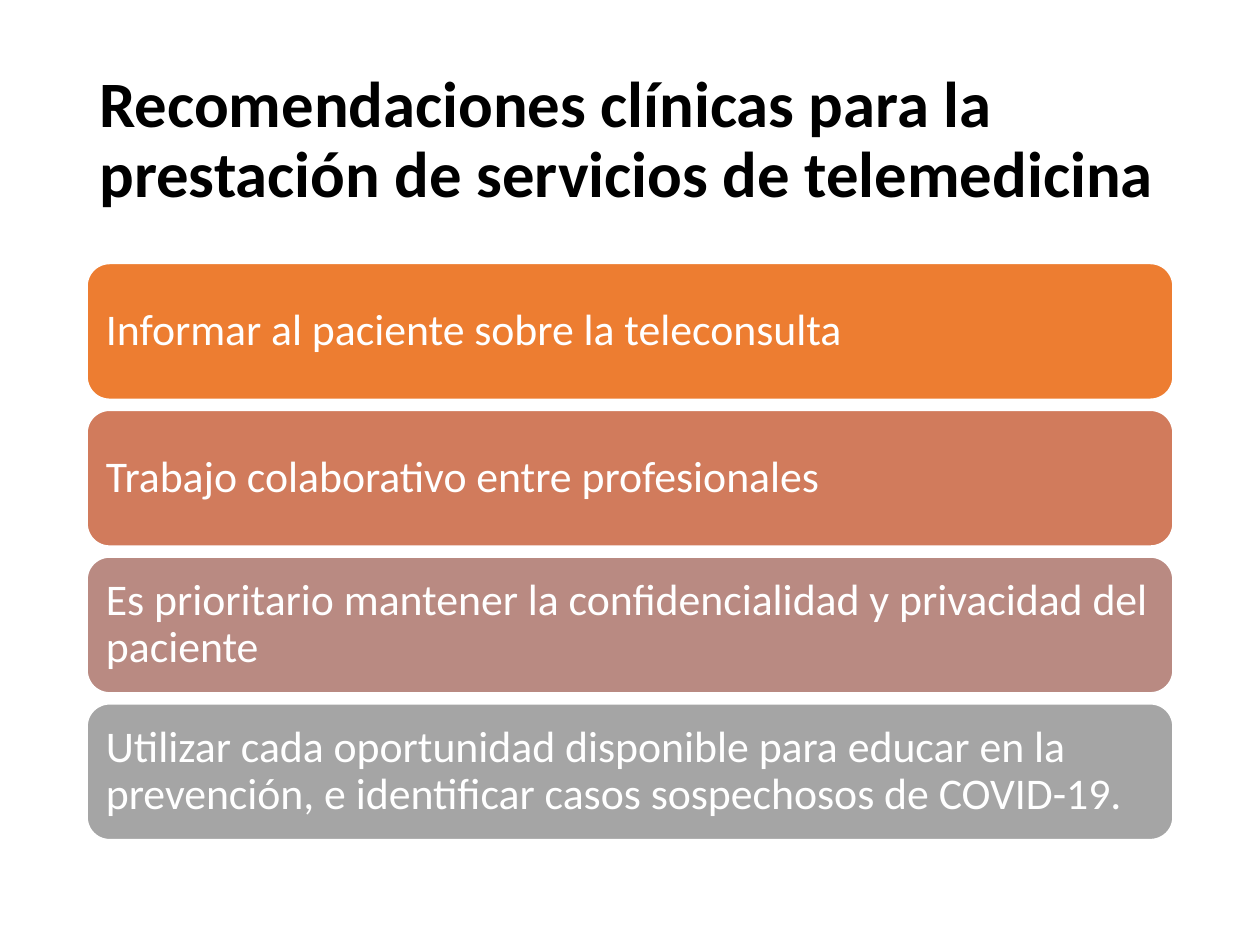
import pptx
import pptx.util
import pptx.dml.color
import pptx.enum.shapes
import pptx.enum.text

Inches, Pt = pptx.util.Inches, pptx.util.Pt

# Content
TITLE = "Recomendaciones clínicas para la prestación de servicios de telemedicina"
RECOMMENDATIONS = [
    ("Informar al paciente sobre la teleconsulta", "ED7D31"),
    ("Trabajo colaborativo entre profesionales", "D17B5C"),
    ("Es prioritario mantener la confidencialidad y privacidad del paciente", "B98A82"),
    ("Utilizar cada oportunidad disponible para educar en la prevención, "
     "e identificar casos sospechosos de COVID-19.", "A5A5A5"),
]

# Layout in inches
LEFT, WIDTH = 0.69, 8.62
TITLE_TOP, TITLE_HEIGHT = 0.4, 1.45
BARS_TOP, BAR_HEIGHT, BAR_PITCH = 2.09, 1.08, 1.165


def rgb(value):
    return pptx.dml.color.RGBColor.from_string(value)


def write(sp, text, size, color, bold=False):
    tf = sp.text_frame
    tf.word_wrap = True
    tf.vertical_anchor = pptx.enum.text.MSO_ANCHOR.MIDDLE
    tf.margin_left = tf.margin_right = Inches(0.1)
    p = tf.paragraphs[0]
    p.text = text
    p.alignment = pptx.enum.text.PP_ALIGN.LEFT
    p.line_spacing = 0.9
    p.font.name = "Calibri"
    p.font.size = Pt(size)
    p.font.bold = bold
    p.font.color.rgb = rgb(color)


prs = pptx.Presentation()
prs.slide_width, prs.slide_height = Inches(10), Inches(7.5)
s = prs.slides.add_slide(prs.slide_layouts[6])

# Title
title = s.shapes.add_textbox(
    Inches(LEFT), Inches(TITLE_TOP), Inches(WIDTH), Inches(TITLE_HEIGHT))
write(title, TITLE, 37, "000000", bold=True)

# Recommendation bars
for i, (text, color) in enumerate(RECOMMENDATIONS):
    bar = s.shapes.add_shape(
        pptx.enum.shapes.MSO_SHAPE.ROUNDED_RECTANGLE,
        Inches(LEFT), Inches(BARS_TOP + i * BAR_PITCH),
        Inches(WIDTH), Inches(BAR_HEIGHT))
    bar.shadow.inherit = False
    bar.fill.solid()
    bar.fill.fore_color.rgb = rgb(color)
    bar.line.color.rgb = rgb("FFFFFF")
    bar.line.width = Pt(1)
    write(bar, text, 25, "FFFFFF")

prs.save("out.pptx")
